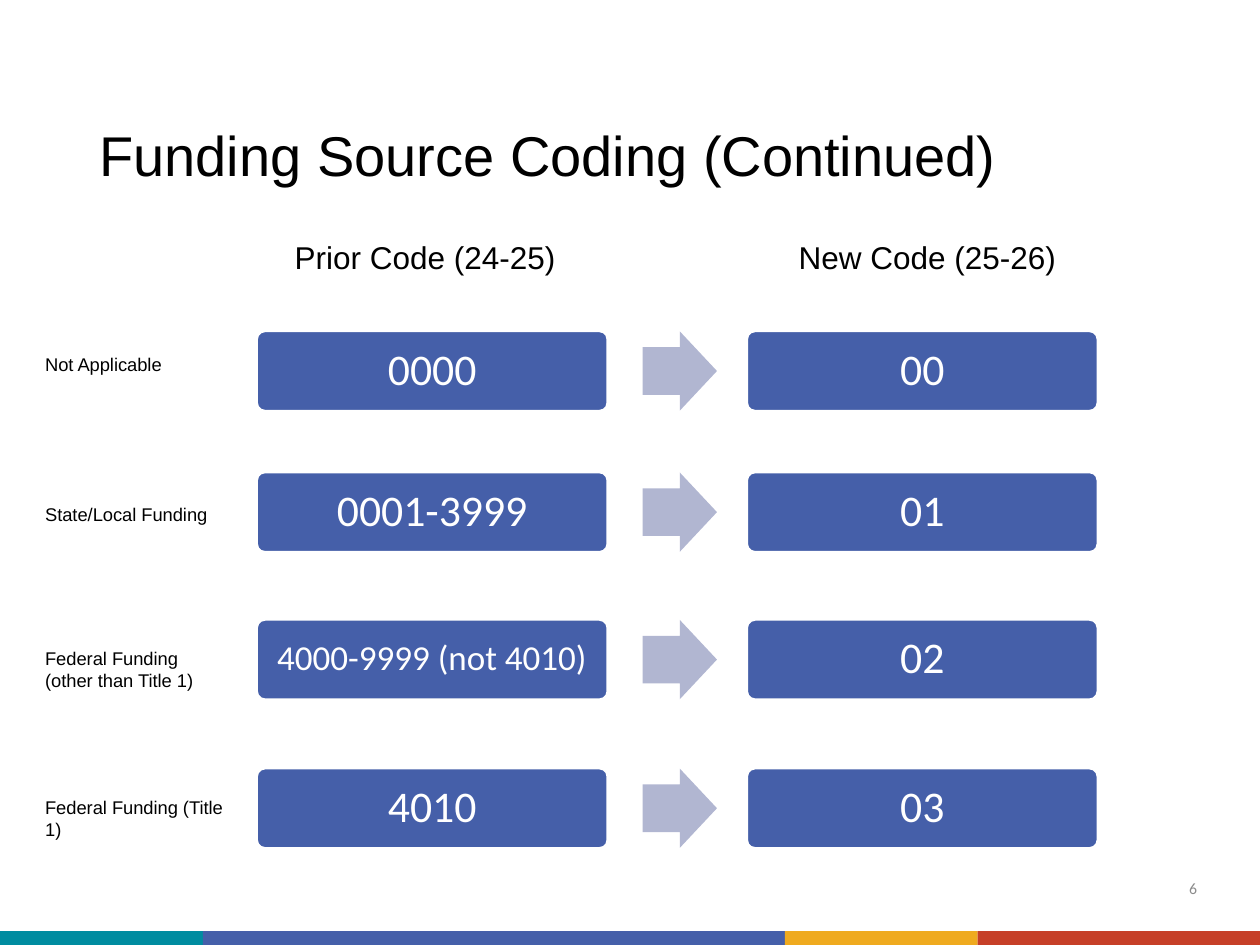
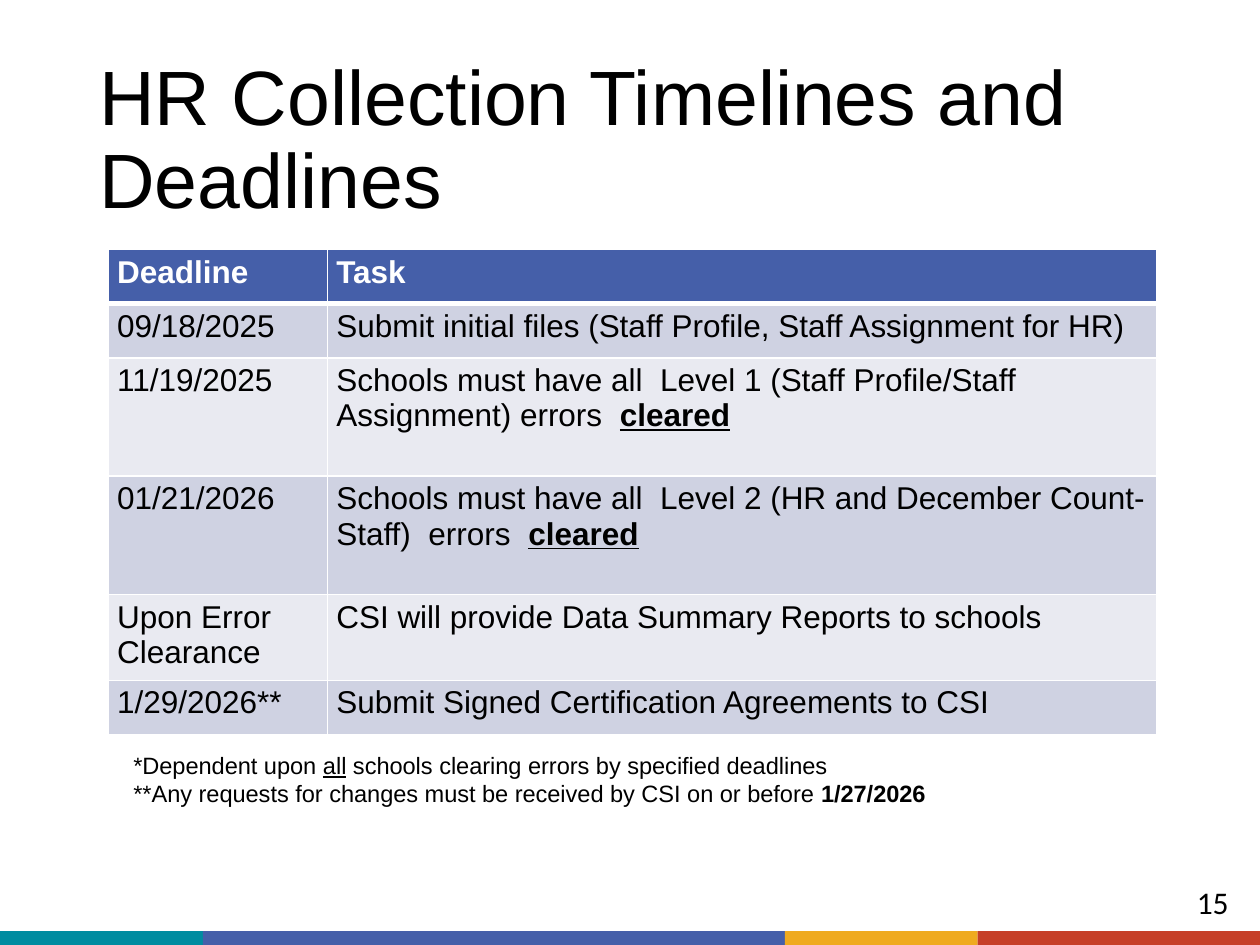
import lxml.etree
import pptx
import pptx.dml.color
import pptx.enum.shapes
import pptx.enum.text
import pptx.oxml.ns
import pptx.util

Inches = pptx.util.Inches
Pt = pptx.util.Pt
Shape = pptx.enum.shapes.MSO_SHAPE
Align = pptx.enum.text.PP_ALIGN
Anchor = pptx.enum.text.MSO_ANCHOR

COLORS = {
    "teal": "008CA0",
    "blue": "455FA9",
    "gold": "EFAA1F",
    "red": "C63F28",
    "arrow": "B1B6D1",
    "row_dark": "CFD2E2",
    "row_light": "E9EAF1",
    "white": "FFFFFF",
    "black": "000000",
    "grey": "8C8C8C",
}
BANDS = [("teal", 1.61), ("blue", 4.62), ("gold", 1.53), ("red", 2.24)]

# label, label top, label height, row top, prior code, prior code size, new code
FUNDING_ROWS = [
    ("Not Applicable", 2.75, 0.29, 2.63, "0000", 25, "00"),
    ("State/Local Funding", 3.94, 0.29, 3.75, "0001-3999", 25, "01"),
    ("Federal Funding (other than Title 1)", 5.09, 0.45, 4.92, "4000-9999 (not 4010)", 20, "02"),
    ("Federal Funding (Title 1)", 6.27, 0.45, 6.1, "4010", 25, "03"),
]

# Each text is a list of (words, marks); marks may hold b for bold and u for underline.
DEADLINES = [
    ("Deadline", [("Task", "b")], 0.43),
    ("09/18/2025", [("Submit initial files (Staff Profile, Staff Assignment for HR)", "")], 0.43),
    ("11/19/2025", [("Schools must have all  Level 1 (Staff Profile/Staff Assignment) errors  ", ""),
                    ("cleared", "bu")], 0.94),
    ("01/21/2026", [("Schools must have all  Level 2 (HR and December Count-Staff)  errors  ", ""),
                    ("cleared", "bu")], 0.94),
    ("Upon Error Clearance", [("CSI will provide Data Summary Reports to schools", "")], 0.43),
    ("1/29/2026**", [("Submit Signed Certification Agreements to CSI", "")], 0.43),
]
FOOTNOTES = [
    [("*Dependent upon ", ""), ("all", "u"), (" schools clearing errors by specified deadlines", "")],
    [("**Any requests for changes must be received by CSI on or before ", ""), ("1/27/2026", "b")],
]


def rgb(name):
    return pptx.dml.color.RGBColor.from_string(COLORS[name])


def style_font(font, size, color="black", name="Arial"):
    font.name = name
    font.size = Pt(size)
    font.color.rgb = rgb(color)


def write_spans(para, spans, size, color="black"):
    for words, marks in spans:
        span = para.add_run()
        span.text = words
        style_font(span.font, size, color)
        span.font.bold = "b" in marks
        span.font.underline = "u" in marks


def set_margins(target, across, down):
    target.margin_left = target.margin_right = Inches(across)
    target.margin_top = target.margin_bottom = Inches(down)


def add_text_box(page, text, place, size, color="black", name="Arial", anchor=Anchor.TOP):
    box = page.shapes.add_textbox(*map(Inches, place))
    frame = box.text_frame
    frame.word_wrap = True
    frame.vertical_anchor = anchor
    frame.text = text
    for span in frame.paragraphs[0].runs:
        style_font(span.font, size, color, name)
    return box


def add_filled_shape(page, kind, place, color):
    shape = page.shapes.add_shape(kind, *map(Inches, place))
    shape.shadow.inherit = False
    shape.fill.solid()
    shape.fill.fore_color.rgb = rgb(color)
    shape.line.fill.background()
    return shape


def add_page(deck, title, title_place, title_size):
    """Add a blank page with the colour bands at its foot and a title."""
    page = deck.slides.add_slide(deck.slide_layouts[6])
    left = 0
    for color, width in BANDS:
        add_filled_shape(page, Shape.RECTANGLE, (left, 7.39, width, 0.11), color)
        left += width
    box = add_text_box(page, title, title_place, title_size, anchor=Anchor.MIDDLE)
    box.text_frame.paragraphs[0].line_spacing = 0.9
    return page


def add_code_box(page, code, left, top, size):
    box = add_filled_shape(page, Shape.ROUNDED_RECTANGLE, (left, top, 2.78, 0.63), "blue")
    box.adjustments[0] = 0.1
    box.line.color.rgb = rgb("white")
    box.line.width = Pt(1)
    frame = box.text_frame
    frame.word_wrap = True
    frame.vertical_anchor = Anchor.MIDDLE
    set_margins(frame, 0.1, 0.1)
    frame.text = code
    para = frame.paragraphs[0]
    para.alignment = Align.CENTER
    para.line_spacing = 0.9
    style_font(para.runs[0].font, size, "white", "Calibri")


def add_tab_stop(para, position):
    properties = para._p.get_or_add_pPr()
    tabs = lxml.etree.SubElement(properties, pptx.oxml.ns.qn("a:tabLst"))
    lxml.etree.SubElement(tabs, pptx.oxml.ns.qn("a:tab"), pos=str(Inches(position)), algn="l")


def set_cell_borders(cell, top, bottom):
    """Draw white borders, with the top and bottom widths in points."""
    properties = cell._tc.get_or_add_tcPr()
    sides = [("L", 1), ("R", 1), ("T", top), ("B", bottom)]
    for index, (side, width) in enumerate(sides):
        line = lxml.etree.Element(pptx.oxml.ns.qn(f"a:ln{side}"), w=str(Pt(width)))
        fill = lxml.etree.SubElement(line, pptx.oxml.ns.qn("a:solidFill"))
        lxml.etree.SubElement(fill, pptx.oxml.ns.qn("a:srgbClr"), val=COLORS["white"])
        properties.insert(index, line)


def add_deadline_table(page):
    place = map(Inches, (0.86, 1.98, 8.32, 3.6))
    table = page.shapes.add_table(len(DEADLINES), 2, *place).table
    for column, width in zip(table.columns, (1.74, 6.58)):
        column.width = Inches(width)
    for index, (deadline, task, height) in enumerate(DEADLINES):
        header = index == 0
        table.rows[index].height = Inches(height)
        if header:
            fill = "blue"
        else:
            fill = "row_dark" if index % 2 else "row_light"
        deadline_spans = [(deadline, "b" if header else "")]
        for cell, spans in zip(table.rows[index].cells, (deadline_spans, task)):
            cell.fill.solid()
            cell.fill.fore_color.rgb = rgb(fill)
            set_margins(cell, 0.07, 0.04)
            set_cell_borders(cell, 3 if index == 1 else 1, 3 if header else 1)
            para = cell.text_frame.paragraphs[0]
            write_spans(para, spans, 18, "white" if header else "black")


def add_footnotes(page):
    box = page.shapes.add_textbox(*map(Inches, (0.96, 5.91, 6.65, 0.56)))
    frame = box.text_frame
    frame.word_wrap = True
    for index, spans in enumerate(FOOTNOTES):
        para = frame.add_paragraph() if index else frame.paragraphs[0]
        write_spans(para, spans, 13.5)


def build_funding_page(deck):
    page = add_page(deck, "Funding Source Coding (Continued)", (0.69, 0.68, 8.62, 1.16), 32)
    headings = add_text_box(page, "Prior Code (24-25)\tNew Code (25-26)", (2.24, 1.84, 6.36, 0.4), 18)
    add_tab_stop(headings.text_frame.paragraphs[0], 4)
    for label, label_top, label_height, top, prior, prior_size, new in FUNDING_ROWS:
        add_text_box(page, label, (0.26, label_top, 1.65, label_height), 10.5)
        add_code_box(page, prior, 2.04, top, prior_size)
        arrow = add_filled_shape(page, Shape.RIGHT_ARROW, (5.1, top, 0.59, 0.63), "arrow")
        arrow.adjustments[0] = 0.6
        arrow.adjustments[1] = 0.5
        add_code_box(page, new, 5.93, top, 25)
    number = add_text_box(page, "6", (9.36, 6.9, 0.19, 0.3), 9, "grey", "Calibri", Anchor.MIDDLE)
    set_margins(number.text_frame, 0.05, 0.04)
    number.text_frame.paragraphs[0].alignment = Align.RIGHT


def build_deadline_page(deck):
    page = add_page(deck, "HR Collection Timelines and Deadlines", (0.69, 0.4, 8.62, 1.45), 44)
    add_deadline_table(page)
    add_footnotes(page)
    add_text_box(page, "15", (9.4, 6.96, 0.6, 0.46), 18, name="Calibri")


def main():
    deck = pptx.Presentation()
    deck.slide_width = Inches(10)
    deck.slide_height = Inches(7.5)
    build_funding_page(deck)
    build_deadline_page(deck)
    deck.save("out.pptx")


if __name__ == "__main__":
    main()
